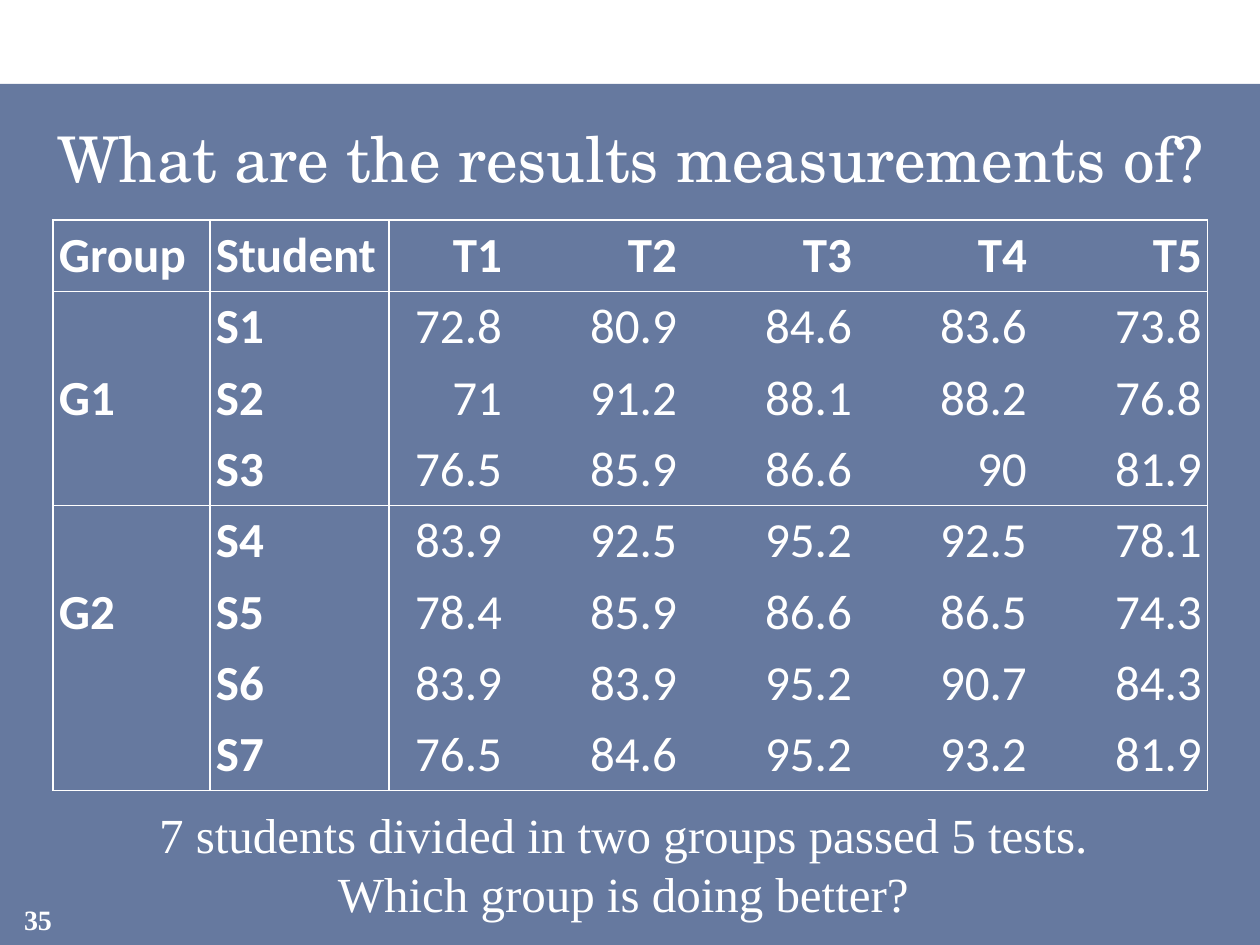
from dataclasses import dataclass

from lxml import etree
from pptx import Presentation
from pptx.dml.color import RGBColor
from pptx.enum.shapes import MSO_SHAPE
from pptx.enum.text import MSO_ANCHOR, PP_ALIGN
from pptx.oxml.ns import qn
from pptx.util import Emu, Pt

LEFT, CENTER, RIGHT = PP_ALIGN.LEFT, PP_ALIGN.CENTER, PP_ALIGN.RIGHT
MIDDLE, BOTTOM = MSO_ANCHOR.MIDDLE, MSO_ANCHOR.BOTTOM
RECTANGLE = MSO_SHAPE.RECTANGLE
PX = 914400 // 126
TITLE_ONLY = 5


@dataclass(frozen=True)
class Theme:
    navy: str = "002060"
    white: str = "FFFFFF"
    title_font: str = "TeX Gyre Schola"
    table_font: str = "Calibri"
    body_font: str = "Times New Roman"
    title_size: int = 36
    body_size: int = 28
    number_size: int = 16
    backdrop_opacity: int = 60
    border_width: int = 1
    cell_inset: int = 6


def px(*lengths):
    return [Emu(length * PX) for length in lengths]


class SlideBuilder:
    def __init__(self, deck, theme):
        self.theme = theme
        self.page = deck.slides.add_slide(deck.slide_layouts[TITLE_ONLY])

    def add_span(self, paragraph, text, font, size, align, bold=False):
        paragraph.alignment = align
        span = paragraph.add_run()
        span.text = text
        span.font.name, span.font.size, span.font.bold = font, Pt(size), bold
        span.font.color.rgb = RGBColor.from_string(self.theme.white)

    def backdrop(self, *bounds):
        shape = self.page.shapes.add_shape(RECTANGLE, *px(*bounds))
        shape.shadow.inherit = False
        shape.line.fill.background()
        shape.fill.solid()
        shape.fill.fore_color.rgb = RGBColor.from_string(self.theme.navy)
        color = shape._element.spPr.find(".//" + qn("a:srgbClr"))
        opacity = str(self.theme.backdrop_opacity * 1000)
        etree.SubElement(color, qn("a:alpha"), val=opacity)
        # Behind the title placeholder
        self.page.shapes.title._element.addprevious(shape._element)

    def title(self, text, *bounds):
        box = self.page.shapes.title
        box.left, box.top, box.width, box.height = px(*bounds)
        box.text_frame.vertical_anchor = MIDDLE
        self.add_span(box.text_frame.paragraphs[0], text,
                      self.theme.title_font, self.theme.title_size, CENTER)

    def text(self, lines, size, *bounds, bold=False, wrap=True):
        frame = self.page.shapes.add_textbox(*px(*bounds)).text_frame
        frame.word_wrap = wrap
        frame.vertical_anchor = MIDDLE
        for index, line in enumerate(lines):
            paragraph = frame.add_paragraph() if index else frame.paragraphs[0]
            self.add_span(paragraph, line, self.theme.body_font, size, CENTER, bold)

    def borders(self, cell, sides):
        properties = cell._tc.get_or_add_tcPr()
        for position, side in enumerate("LRTB"):
            line = etree.Element(qn(f"a:ln{side}"))
            if side in sides:
                line.set("w", str(int(Pt(self.theme.border_width))))
                fill = etree.SubElement(line, qn("a:solidFill"))
                etree.SubElement(fill, qn("a:srgbClr"), val=self.theme.white)
            else:
                etree.SubElement(line, qn("a:noFill"))
            properties.insert(position, line)

    def table(self, rows, widths, block_starts, label_columns, *bounds):
        frame = self.page.shapes.add_table(len(rows), len(widths), *px(*bounds))
        table = frame.table
        table.first_row = table.horz_banding = False
        for column, width in zip(table.columns, px(*widths)):
            column.width = width
        last_row, last_column = len(rows) - 1, len(widths) - 1
        inset, = px(self.theme.cell_inset)
        for r, row in enumerate(rows):
            for c, value in enumerate(row):
                cell = table.cell(r, c)
                cell.fill.background()
                cell.vertical_anchor = BOTTOM
                cell.margin_left = cell.margin_right = inset
                cell.margin_top = cell.margin_bottom = inset
                label = c < label_columns
                if value:
                    self.add_span(cell.text_frame.paragraphs[0], value,
                                  self.theme.table_font, self.theme.body_size,
                                  LEFT if label else RIGHT, label or r == 0)
                # Rules frame each block of rows and each label column
                sides = "L" if c <= label_columns else ""
                sides += "R" if label or c == last_column else ""
                sides += "T" if r in block_starts else ""
                sides += "B" if r == last_row or r + 1 in block_starts else ""
                self.borders(cell, sides)


ROWS = [
    ["Group", "Student", "T1", "T2", "T3", "T4", "T5"],
    ["", "S1", "72.8", "80.9", "84.6", "83.6", "73.8"],
    ["G1", "S2", "71", "91.2", "88.1", "88.2", "76.8"],
    ["", "S3", "76.5", "85.9", "86.6", "90", "81.9"],
    ["", "S4", "83.9", "92.5", "95.2", "92.5", "78.1"],
    ["G2", "S5", "78.4", "85.9", "86.6", "86.5", "74.3"],
    ["", "S6", "83.9", "83.9", "95.2", "90.7", "84.3"],
    ["", "S7", "76.5", "84.6", "95.2", "93.2", "81.9"],
]
WIDTHS = [157, 179, 119] + [175] * 4
QUESTION = ["7 students divided in two groups passed 5 tests. ",
            "Which group is doing better? "]


def main():
    deck = Presentation()
    deck.slide_width, deck.slide_height = px(1260, 945)
    theme = Theme()
    slide = SlideBuilder(deck, theme)

    # Background and page number
    slide.backdrop(0, 84, 1260, 861)
    slide.text(["35"], theme.number_size, 0, 894, 76, 50, bold=True)

    # Title
    slide.title("What are the results measurements of?", 32, 105, 1197, 105)

    # Test results, ruled by group
    slide.table(ROWS, WIDTHS, {0, 1, 4}, 2, 53, 220, sum(WIDTHS), 571)

    # Question
    slide.text(QUESTION, theme.body_size, 142, 798, 975, 131, wrap=False)

    deck.save("out.pptx")


if __name__ == "__main__":
    main()
